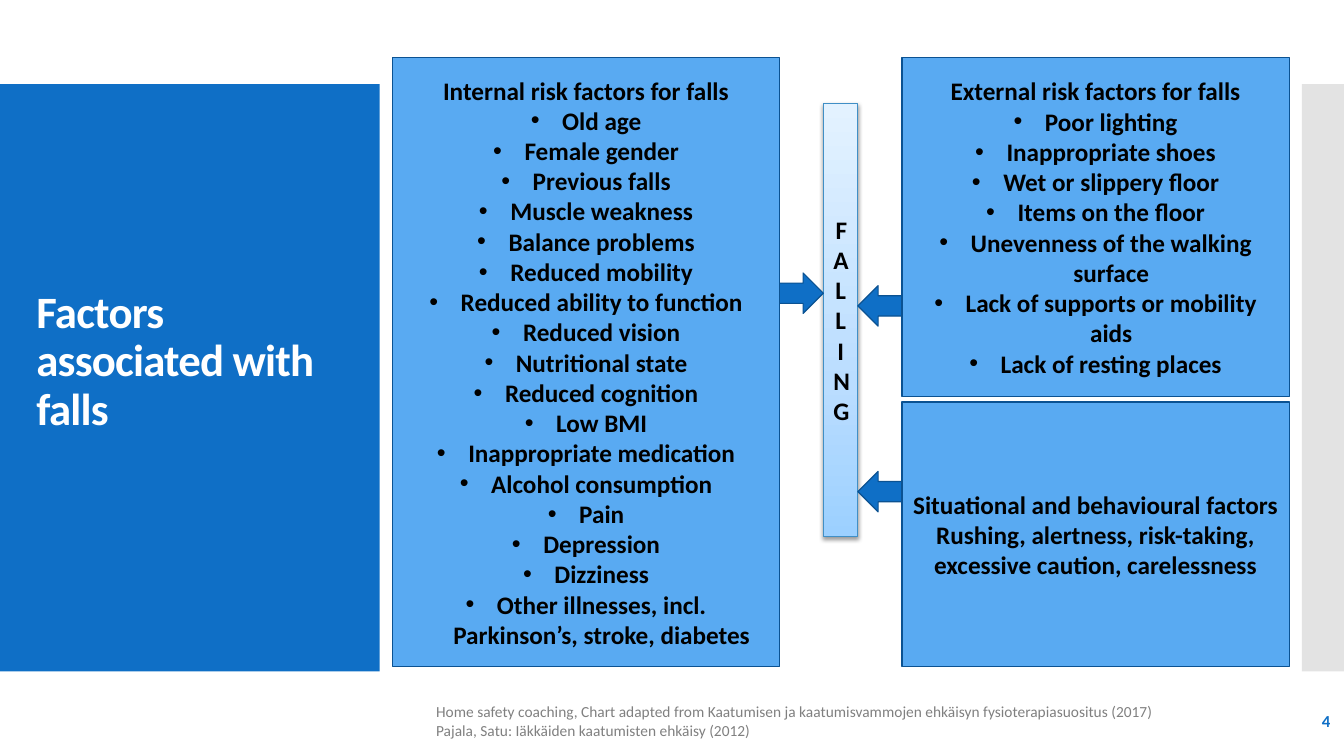
"""Builds a slide on the internal, external and situational factors behind falls."""
import copy

import pptx
import pptx.dml.color
import pptx.enum.shapes
import pptx.enum.text
import pptx.oxml
import pptx.oxml.ns
import pptx.util

Cm = pptx.util.Cm
Pt = pptx.util.Pt
RGBColor = pptx.dml.color.RGBColor
SHAPE = pptx.enum.shapes.MSO_SHAPE
ALIGN = pptx.enum.text.PP_ALIGN
qn = pptx.oxml.ns.qn
NAMESPACE = pptx.oxml.ns.nsdecls("a")

BLUE = RGBColor(0x0F, 0x6F, 0xC6)
DARK_BLUE = RGBColor(0x0B, 0x52, 0x92)
LIGHT_BLUE = RGBColor(0x59, 0xAA, 0xF2)
BAR_BLUE = RGBColor(0x40, 0x8F, 0xC6)
BAR_STOPS = [
    (0, RGBColor(0x9C, 0xD0, 0xFF)),
    (0.35, RGBColor(0xBA, 0xDD, 0xFF)),
    (1, RGBColor(0xE3, 0xF2, 0xFF)),
]
SILVER = RGBColor(0xC8, 0xC8, 0xC8)
GREY = RGBColor(0x80, 0x80, 0x80)
BLACK = RGBColor(0, 0, 0)
WHITE = RGBColor(0xFF, 0xFF, 0xFF)

INTERNAL = [
    "Internal risk factors for falls", "Old age", "Female gender", "Previous falls",
    "Muscle weakness", "Balance problems", "Reduced mobility",
    "Reduced ability to function", "Reduced vision", "Nutritional state",
    "Reduced cognition", "Low BMI", "Inappropriate medication",
    "Alcohol consumption", "Pain", "Depression", "Dizziness",
    "Other illnesses, incl. Parkinson’s, stroke, diabetes",
]
EXTERNAL = [
    "External risk factors for falls", "Poor lighting", "Inappropriate shoes",
    "Wet or slippery floor", "Items on the floor",
    "Unevenness of the walking surface", "Lack of supports or mobility aids",
    "Lack of resting places",
]
SITUATIONAL = [
    "Situational and behavioural factors",
    "Rushing, alertness, risk-taking, excessive caution, carelessness",
]

deck = pptx.Presentation()
deck.slide_width, deck.slide_height = Cm(33.87), Cm(19.05)
slide = deck.slides.add_slide(deck.slide_layouts[6])


def add_block(preset, place, fill, line=None, width=0.85):
    block = slide.shapes.add_shape(preset, *map(Cm, place))
    block.shadow.inherit = False
    block.fill.solid()
    block.fill.fore_color.rgb = fill
    if line is None:
        block.line.fill.background()
    else:
        block.line.color.rgb = line
        block.line.width = Pt(width)
    return block


def write(shape, lines, size, color, bold=True, align=ALIGN.LEFT, bulleted=False):
    frame = shape.text_frame
    frame.word_wrap = True
    frame.vertical_anchor = pptx.enum.text.MSO_ANCHOR.MIDDLE
    frame.text = "\n".join(lines)
    for index, paragraph in enumerate(frame.paragraphs):
        paragraph.alignment = align
        if bulleted and index:
            properties = paragraph._p.get_or_add_pPr()
            properties.set("marL", str(Cm(0.79)))
            properties.set("indent", str(-Cm(0.79)))
            for tag in ('buFont typeface="Arial"', 'buChar char="•"'):
                properties.append(pptx.oxml.parse_xml(f"<a:{tag} {NAMESPACE}/>"))
        for run in paragraph.runs:
            run.font.name = "Calibri"
            run.font.size = Pt(size)
            run.font.bold = bold
            run.font.color.rgb = color


add_block(SHAPE.RECTANGLE, (0, 2.12, 9.57, 14.8), BLUE)
side_strip = add_block(SHAPE.RECTANGLE, (32.81, 2.12, 1.06, 14.8), SILVER)
strip_color = side_strip._element.spPr.find(qn("a:solidFill"))[0]
strip_color.append(pptx.oxml.parse_xml(f'<a:alpha {NAMESPACE} val="50000"/>'))

title = slide.shapes.add_textbox(Cm(0.67), Cm(6.07), Cm(8.13), Cm(6.12))
write(title, ["Factors associated with falls"], 32, WHITE)
title_line = title.text_frame.paragraphs[0]
title_line.line_spacing = 0.9
title_line.runs[0]._r.get_or_add_rPr().set("spc", "-60")

page_number = slide.shapes.add_textbox(Cm(29.54), Cm(17.65), Cm(4.24), Cm(1.02))
write(page_number, ["4"], 12, BLUE, align=ALIGN.RIGHT)

falling_bar = add_block(SHAPE.RECTANGLE, (20.75, 2.61, 0.87, 10.9), LIGHT_BLUE, BAR_BLUE, 0.75)
falling_bar.fill.gradient()
falling_bar.fill.gradient_angle = 90
stop_list = falling_bar._element.spPr.find(qn("a:gradFill")).find(qn("a:gsLst"))
stop_list.insert(1, copy.deepcopy(stop_list[0]))
for stop, (position, color) in zip(falling_bar.fill.gradient_stops, BAR_STOPS):
    stop.position = position
    stop.color.rgb = color
falling_bar._element.spPr.find(qn("a:effectLst")).append(pptx.oxml.parse_xml(
    f'<a:outerShdw {NAMESPACE} blurRad="{Pt(3.1)}" dist="{Pt(1.6)}" dir="5400000" '
    'rotWithShape="0"><a:srgbClr val="000000"><a:alpha val="38000"/></a:srgbClr>'
    "</a:outerShdw>"))
write(falling_bar, ["FALLING"], 18, BLACK, align=ALIGN.CENTER)

for preset, left, top in [
    (SHAPE.RIGHT_ARROW, 19.64, 6.88),
    (SHAPE.LEFT_ARROW, 21.62, 7.2),
    (SHAPE.LEFT_ARROW, 21.62, 11.88),
]:
    add_block(preset, (left, top, 1.11, 1.02), BLUE, DARK_BLUE)

for factors, left, top, height, bulleted in [
    (INTERNAL, 9.89, 1.45, 15.35, True),
    (EXTERNAL, 22.73, 1.45, 8.54, True),
    (SITUATIONAL, 22.73, 10.13, 6.67, False),
]:
    panel = add_block(SHAPE.RECTANGLE, (left, top, 9.76, height), LIGHT_BLUE, DARK_BLUE)
    write(panel, factors, 18, BLACK, align=ALIGN.CENTER, bulleted=bulleted)

sources = slide.shapes.add_textbox(Cm(10.74), Cm(17.65), Cm(19.23), Cm(1.02))
write(sources, [
    "Home safety coaching, Chart adapted from Kaatumisen ja kaatumisvammojen "
    "ehkäisyn fysioterapiasuositus (2017) "
    "Pajala, Satu: Iäkkäiden kaatumisten ehkäisy (2012)"
], 11, GREY, bold=False)

deck.save("out.pptx")
